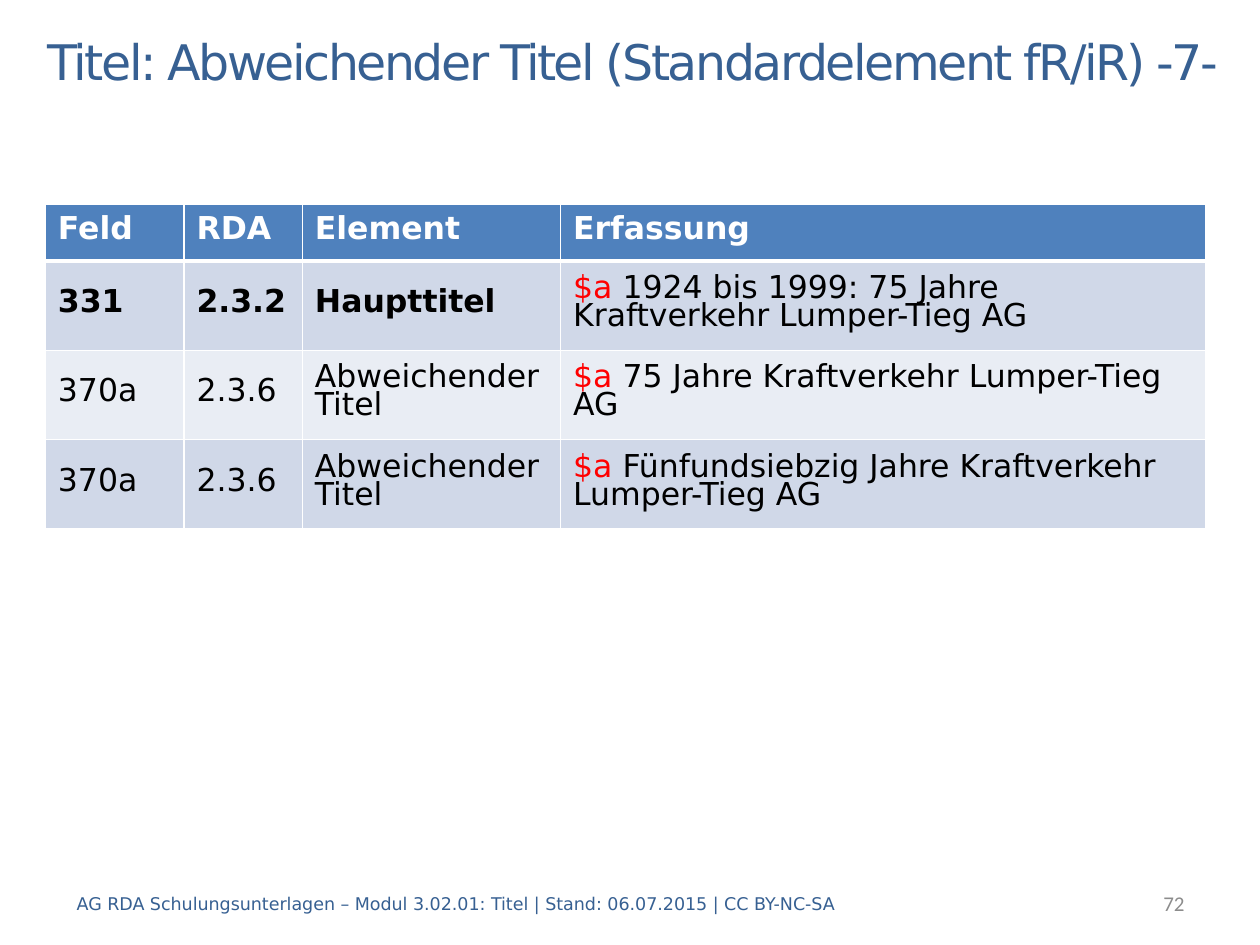
from lxml import etree
from pptx import Presentation
from pptx import util as u
from pptx.dml import color
from pptx.enum import text
from pptx.oxml import ns

FONT = "DejaVu Sans"
BLUE, BLACK, RED, WHITE = "376092", "000000", "FF0000", "FFFFFF"
HEADER_FILL, BAND_FILLS = "4F81BD", ("D0D8E8", "E9EDF4")
COLUMN_WIDTHS = (1.1, 0.94, 2.05, 5.12)
ROW_HEIGHTS = (0.45, 0.71, 0.71, 0.71)
HEADINGS = ("Feld", "RDA", "Element", "Erfassung")
COMPANY = "Kraftverkehr Lumper-Tieg AG"
RECORDS = (
    ("331", "2.3.2", "Haupttitel", f"1924 bis 1999: 75 Jahre {COMPANY}"),
    ("370a", "2.3.6", "Abweichender Titel", f"75 Jahre {COMPANY}"),
    ("370a", "2.3.6", "Abweichender Titel", f"Fünfundsiebzig Jahre {COMPANY}"),
)


def rgb(value):
    return color.RGBColor.from_string(value)


def add_run(paragraph, content, size, colour, bold=False, font=FONT):
    run = paragraph.add_run()
    run.text = content
    run.font.name = font
    run.font.size = u.Pt(size)
    run.font.bold = bold
    run.font.color.rgb = rgb(colour)
    return run


def add_label(slide, box, content, size, colour, font=FONT, align=text.PP_ALIGN.LEFT):
    shape = slide.shapes.add_textbox(*(u.Inches(length) for length in box))
    frame = shape.text_frame
    frame.word_wrap = True
    frame.vertical_anchor = text.MSO_ANCHOR.MIDDLE
    paragraph = frame.paragraphs[0]
    paragraph.alignment = align
    return add_run(paragraph, content, size, colour, font=font)


def set_borders(cell, top, bottom):
    properties = cell._tc.get_or_add_tcPr()
    widths = {"lnL": 1, "lnR": 1, "lnT": top, "lnB": bottom}
    for index, (side, width) in enumerate(widths.items()):
        line = etree.Element(ns.qn(f"a:{side}"), w=str(u.Pt(width)))
        fill = etree.SubElement(line, ns.qn("a:solidFill"))
        etree.SubElement(fill, ns.qn("a:srgbClr"), val=WHITE)
        properties.insert(index, line)


def fill_cell(cell, runs, fill, top=1, bottom=1):
    cell.fill.solid()
    cell.fill.fore_color.rgb = rgb(fill)
    set_borders(cell, top, bottom)
    paragraph = cell.text_frame.paragraphs[0]
    for content, colour, bold in runs:
        add_run(paragraph, content, 18, colour, bold)
    return paragraph


def add_records(slide):
    shape = slide.shapes.add_table(
        len(ROW_HEIGHTS), len(COLUMN_WIDTHS), u.Inches(0.36), u.Inches(1.62),
        u.Inches(sum(COLUMN_WIDTHS)), u.Inches(sum(ROW_HEIGHTS)))
    table = shape.table
    for column, width in zip(table.columns, COLUMN_WIDTHS):
        column.width = u.Inches(width)
    for row, height in zip(table.rows, ROW_HEIGHTS):
        row.height = u.Inches(height)
    for column, heading in enumerate(HEADINGS):
        fill_cell(table.cell(0, column), [(heading, WHITE, True)], HEADER_FILL, bottom=3)
    for row, record in enumerate(RECORDS, 1):
        for column, content in enumerate(record):
            is_entry = column == len(record) - 1
            runs = [(content, BLACK, row == 1 and not is_entry)]
            if is_entry:
                runs.insert(0, ("$a ", RED, False))
            cell = table.cell(row, column)
            cell.vertical_anchor = text.MSO_ANCHOR.MIDDLE
            paragraph = fill_cell(cell, runs, BAND_FILLS[(row - 1) % 2],
                                  top=3 if row == 1 else 1)
            paragraph.line_spacing = u.Pt(16)


def main():
    presentation = Presentation()
    presentation.slide_width = u.Inches(10)
    presentation.slide_height = u.Inches(7.5)
    slide = presentation.slides.add_slide(presentation.slide_layouts[6])
    title = add_label(slide, (0.28, 0.2, 9.72, 0.56),
                      "Titel: Abweichender Titel (Standardelement fR/iR) -7-", 28, BLUE)
    title.font._element.set("spc", "-140")
    add_label(slide, (7.91, 6.97, 1.59, 0.4), "72", 12, "8C8C8C",
              font="Calibri", align=text.PP_ALIGN.RIGHT)
    add_label(slide, (0.51, 6.97, 6.69, 0.4),
              "AG RDA Schulungsunterlagen – Modul 3.02.01: Titel | "
              "Stand: 06.07.2015 | CC BY-NC-SA", 10, BLUE)
    add_records(slide)
    presentation.save("out.pptx")


if __name__ == "__main__":
    main()
